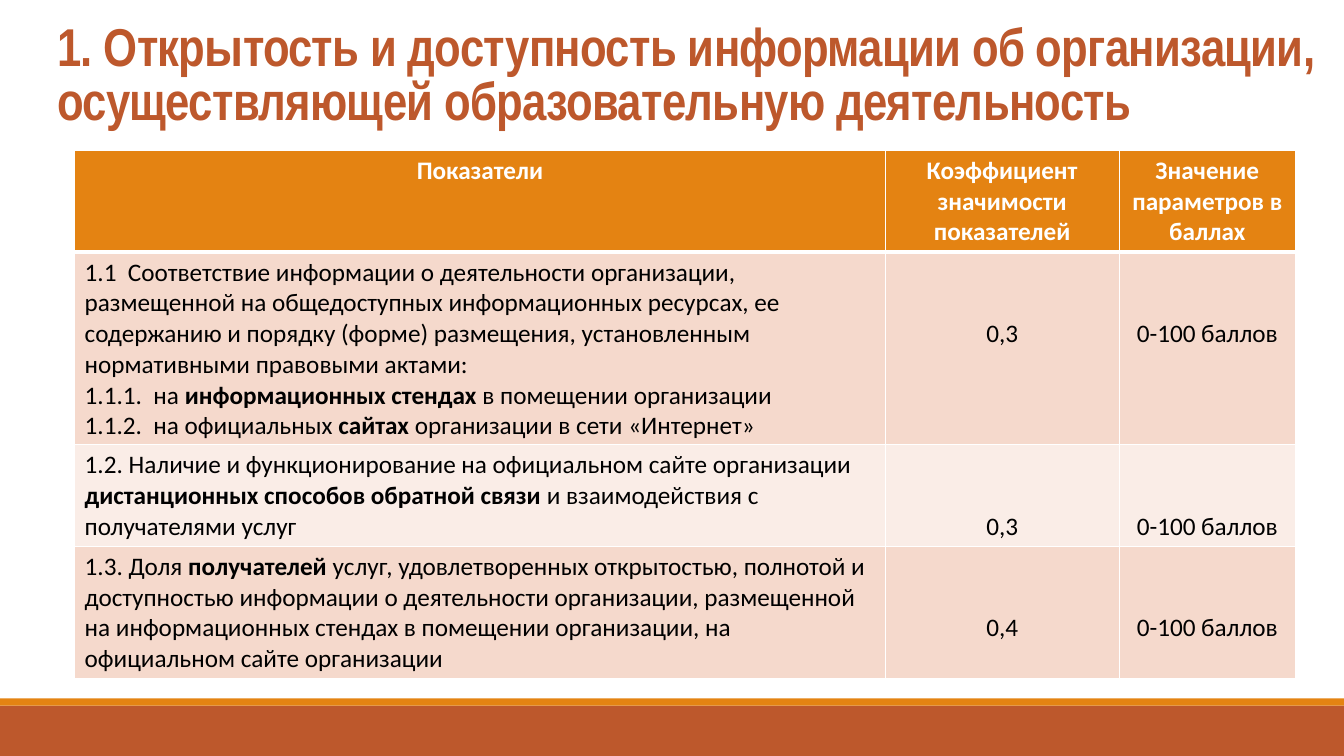
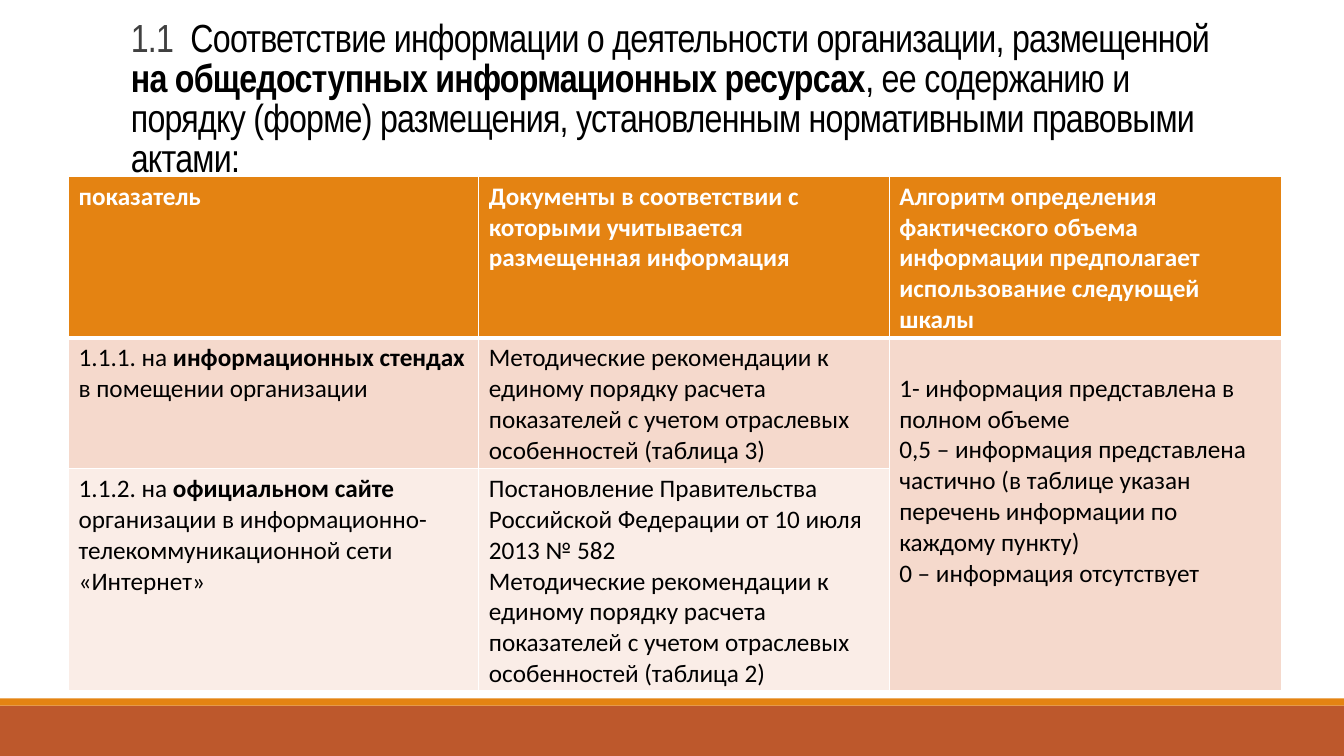
from dataclasses import dataclass

from lxml.etree import SubElement
from pptx import Presentation
from pptx.dml.color import RGBColor
from pptx.enum.shapes import MSO_SHAPE
from pptx.enum.text import MSO_ANCHOR, PP_ALIGN
from pptx.oxml.ns import qn
from pptx.util import Inches, Pt


@dataclass(frozen=True)
class Theme:
    width: float = 13.33
    height: float = 7.5
    title_font: str = "Arial Narrow"
    body_font: str = "Calibri"
    body_size: int = 18
    body_line: float = 0.305
    cell_inset: float = 0.05
    rust: str = "BD582C"
    orange: str = "E48312"
    stripes: tuple = ("F5D9CC", "FAEDE7")
    white: str = "FFFFFF"
    black: str = "000000"
    grey: str = "404040"


THEME = Theme()
BANDS = [(7, 0.5, THEME.rust), (6.93, 0.07, THEME.orange)]  # top, height, colour

# In texts, **...** marks bold. A cell is a list of paragraphs; None continues the cell above.
SCORE = ["0-100 баллов"]
SLIDES = [
    {
        "title": [("**1. Открытость и доступность информации об организации, "
                   "осуществляющей образовательную деятельность**", THEME.rust)],
        "title_box": (0.47, 0.15, 12.86, 1.24),
        "title_size": 38,
        "table_at": (0.74, 1.49),
        "columns": [8.04, 2.32, 1.75],
        "row_heights": [1.01, 1.91, 1.01, 1.31],
        "centred": {1, 2},
        "centre_header": True,
        "lowered": {1: 2, 2: 2},  # column: text lines left free above its body text
        "rows": [
            [["Показатели"], ["Коэффициент значимости показателей"],
             ["Значение параметров в баллах"]],
            [["1.1  Соответствие информации о деятельности организации, размещенной на "
              "общедоступных информационных ресурсах, ее содержанию и порядку (форме) "
              "размещения, установленным нормативными правовыми актами:",
              "1.1.1.  на **информационных стендах **в помещении организации",
              "1.1.2.  на официальных **сайтах **организации в сети «Интернет»"],
             ["0,3"], SCORE],
            [["1.2. Наличие и функционирование на официальном сайте организации "
              "**дистанционных способов обратной связи **и взаимодействия с "
              "получателями услуг"],
             ["0,3"], SCORE],
            [["1.3. Доля **получателей** услуг, удовлетворенных открытостью, полнотой и "
              "доступностью информации о деятельности организации, размещенной на "
              "информационных стендах в помещении организации, на официальном сайте "
              "организации"],
             ["0,4"], SCORE],
        ],
    },
    {
        "title": [("1.1  ", THEME.grey),
                  ("Соответствие информации о деятельности организации, размещенной "
                   "**на общедоступных информационных ресурсах**, ее содержанию и порядку "
                   "(форме) размещения, установленным нормативными правовыми актами:",
                   THEME.black)],
        "title_box": (1.2, 0.24, 11, 1.52),
        "title_size": 28,
        "table_at": (0.68, 1.75),
        "columns": [4.07, 4.07, 3.89],
        "row_heights": [1.58, 1.28, 2.17],
        "centred": set(),
        "centre_header": False,
        "lowered": {2: 1},
        "rows": [
            [["показатель"],
             ["Документы в соответствии с которыми учитывается размещенная информация"],
             ["Алгоритм определения фактического объема информации предполагает "
              "использование следующей шкалы"]],
            [["1.1.1. на **информационных стендах **в помещении организации"],
             ["Методические рекомендации к единому порядку расчета показателей с учетом "
              "отраслевых особенностей (таблица 3)"],
             ["1- информация представлена в полном объеме",
              "0,5 – информация представлена частично (в таблице указан перечень "
              "информации по каждому пункту)",
              "0 – информация отсутствует"]],
            [["1.1.2. на **официальном сайте **организации в "
              "информационно-телекоммуникационной сети «Интернет»"],
             ["Постановление Правительства Российской Федерации от 10 июля 2013 № 582",
              "Методические рекомендации к единому порядку расчета показателей с учетом "
              "отраслевых особенностей (таблица 2)"],
             None],
        ],
    },
]


def paint(fill, colour):
    fill.solid()
    fill.fore_color.rgb = RGBColor.from_string(colour)


def add_runs(paragraph, marked, font, size, colour, bold=False, spacing=None):
    """Write text run by run, with the parts between ** in bold."""
    for i, part in enumerate(marked.split("**")):
        if not part:
            continue
        run = paragraph.add_run()
        run.text = part
        run.font.name = font
        run.font.size = Pt(size)
        run.font.bold = bold or i % 2 == 1
        run.font.color.rgb = RGBColor.from_string(colour)
        if spacing is not None:
            run.font._element.set("spc", str(round(spacing * 100)))


def add_bands(slide):
    for top, height, colour in BANDS:
        band = slide.shapes.add_shape(MSO_SHAPE.RECTANGLE, 0, Inches(top),
                                      Inches(THEME.width), Inches(height))
        band.shadow.inherit = False
        paint(band.fill, colour)
        band.line.fill.background()


def add_title(slide, content):
    frame = slide.shapes.add_textbox(*map(Inches, content["title_box"])).text_frame
    frame.word_wrap = True
    frame.vertical_anchor = MSO_ANCHOR.MIDDLE
    paragraph = frame.paragraphs[0]
    paragraph.line_spacing = 0.85
    for text, colour in content["title"]:
        add_runs(paragraph, text, THEME.title_font, content["title_size"], colour,
                 spacing=-0.5)


def set_borders(cell, row):
    """White cell edges, with a heavier rule under the header row."""
    widths = {"lnL": 1, "lnR": 1, "lnT": 3 if row == 1 else 1, "lnB": 3 if row == 0 else 1}
    properties = cell._tc.get_or_add_tcPr()
    for edge, width in widths.items():
        line = SubElement(properties, qn(f"a:{edge}"), w=str(Pt(width)))
        SubElement(SubElement(line, qn("a:solidFill")), qn("a:srgbClr"), val=THEME.white)


def fill_cell(cell, paragraphs, header, centred, free_lines):
    cell.margin_top = Inches(THEME.cell_inset + free_lines * THEME.body_line)
    cell.margin_bottom = Inches(THEME.cell_inset)
    frame = cell.text_frame
    for i, text in enumerate(paragraphs):
        paragraph = frame.add_paragraph() if i else frame.paragraphs[0]
        paragraph.alignment = PP_ALIGN.CENTER if centred else PP_ALIGN.LEFT
        add_runs(paragraph, text, THEME.body_font, THEME.body_size,
                 THEME.white if header else THEME.black, bold=header)


def add_indicators(slide, content):
    rows, columns, heights = content["rows"], content["columns"], content["row_heights"]
    left, top = content["table_at"]
    table = slide.shapes.add_table(
        len(rows), len(columns), Inches(left), Inches(top),
        Inches(sum(columns)), Inches(sum(heights))).table
    for column, width in zip(table.columns, columns):
        column.width = Inches(width)
    for row, height in zip(table.rows, heights):
        row.height = Inches(height)
    for r, row in enumerate(rows):
        header = r == 0
        for c, paragraphs in enumerate(row):
            cell = table.cell(r, c)
            set_borders(cell, r)
            paint(cell.fill, THEME.orange if header else THEME.stripes[(r - 1) % 2])
            if paragraphs is None:
                table.cell(r - 1, c).merge(cell)
                continue
            centred = content["centre_header"] if header else c in content["centred"]
            free_lines = 0 if header else content["lowered"].get(c, 0)
            fill_cell(cell, paragraphs, header, centred, free_lines)


def main():
    deck = Presentation()
    deck.slide_width, deck.slide_height = Inches(THEME.width), Inches(THEME.height)
    for content in SLIDES:
        slide = deck.slides.add_slide(deck.slide_layouts[6])
        add_bands(slide)
        add_title(slide, content)
        add_indicators(slide, content)
    deck.save("out.pptx")


if __name__ == "__main__":
    main()
